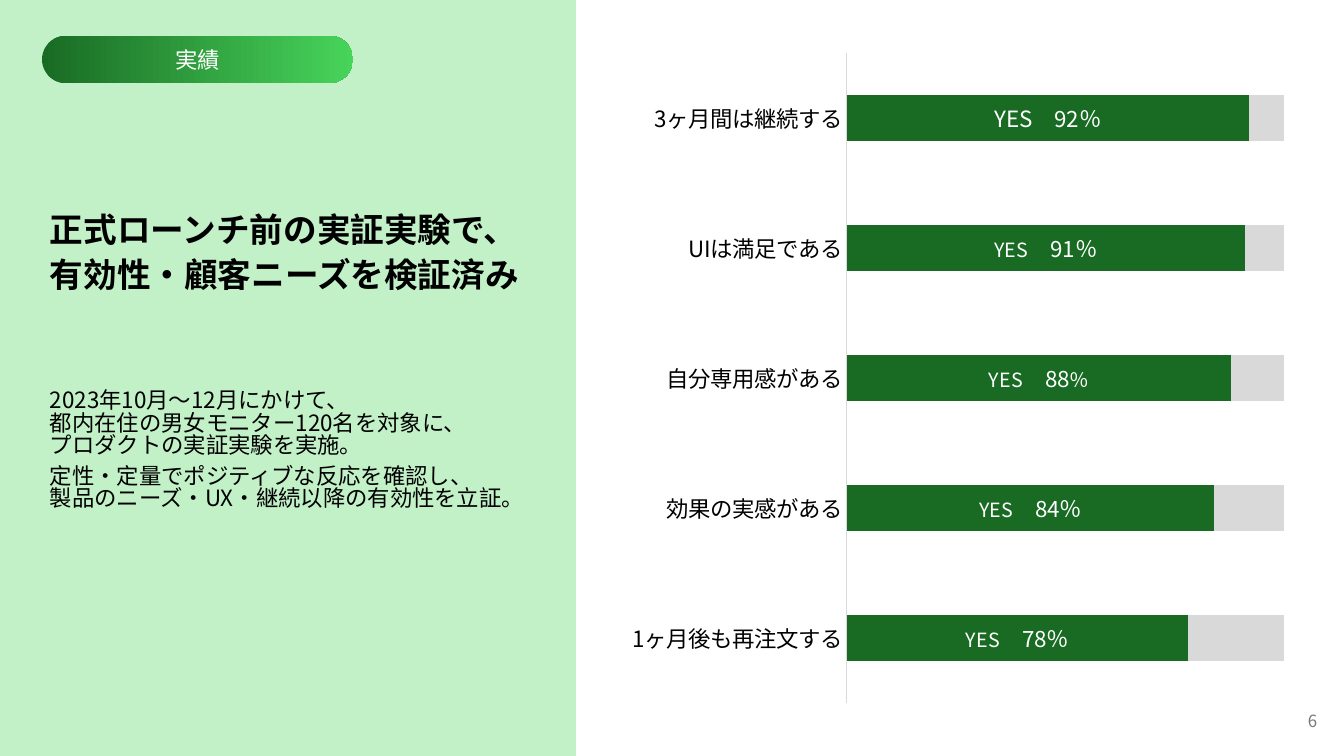
"""Build the trial results slide: message on the left, YES rates on the right."""
from lxml import etree
from pptx import Presentation, util as u
from pptx.chart.data import CategoryChartData
from pptx.dml.color import RGBColor
from pptx.enum import chart as ch, shapes, text
from pptx.oxml.ns import qn

FACE = "Noto Sans CJK JP"
BLACK = RGBColor(0, 0, 0)
WHITE = RGBColor(255, 255, 255)
GRAY = RGBColor(0x79, 0x79, 0x79)
PALE = RGBColor(0xD9, 0xD9, 0xD9)
MINT = RGBColor(0xC2, 0xF1, 0xC8)
GREEN = RGBColor(0x19, 0x6B, 0x24)
LIME = RGBColor(0x47, 0xD4, 0x5A)

TAG = ["実績"]
HEAD = ["正式ローンチ前の実証実験で、", "有効性・顧客ニーズを検証済み"]
BODY = [
    "2023年10月〜12月にかけて、\n都内在住の男女モニター120名を対象に、\nプロダクトの実証実験を実施。",
    "定性・定量でポジティブな反応を確認し、\n製品のニーズ・UX・継続以降の有効性を立証。",
]
PAGE = ["6"]
RATES = [
    ("1ヶ月後も再注文する", 78, (14, 16, 16)),
    ("効果の実感がある", 84, (14, 16, 16)),
    ("自分専用感がある", 88, (14, 16, 14)),
    ("UIは満足である", 91, (14, 16, 16)),
    ("3ヶ月間は継続する", 92, (16, 16, 16)),
]
WIDE, HIGH = 1344, 756
CHART = (612, 39, 685, 677)
PLOT = (847, 53, 437, 650)


def px(n):
    return u.Emu(round(n * 914400 / 100.8))


def style(font, size, color, bold=False):
    font.size, font.bold, font.name = u.Pt(size), bold, FACE
    font.color.rgb = color
    etree.SubElement(font._rPr, qn("a:ea")).set("typeface", FACE)


def write(frame, lines, size=16, color=BLACK, bold=False, align=text.PP_ALIGN.LEFT,
          anchor=text.MSO_ANCHOR.TOP, before=6, space=None):
    frame.word_wrap = True
    frame.vertical_anchor = anchor
    for i, line in enumerate(lines):
        para = frame.add_paragraph() if i else frame.paragraphs[0]
        para.text = line
        para.alignment, para.space_before = align, u.Pt(before)
        para.line_spacing = space
        for run in para.runs:
            style(run.font, size, color, bold)


def block(kind, *box):
    shape = slide.shapes.add_shape(kind, *map(px, box))
    shape.shadow.inherit = False
    shape.line.fill.background()
    return shape


def label(*box):
    return slide.shapes.add_textbox(*map(px, box)).text_frame


def place(plot):
    for old in plot.findall(qn("c:layout")):
        plot.remove(old)
    layout = etree.Element(qn("c:layout"))
    plot.insert(0, layout)
    manual = etree.SubElement(layout, qn("c:manualLayout"))
    x, y, w, h = PLOT
    left, top, width, height = CHART
    parts = {"layoutTarget": "inner", "xMode": "edge", "yMode": "edge",
             "x": (x - left) / width, "y": (y - top) / height,
             "w": w / width, "h": h / height}
    for key, val in parts.items():
        etree.SubElement(manual, qn("c:" + key)).set("val", str(val))


def draw():
    data = CategoryChartData()
    data.categories = [name for name, _, _ in RATES]
    data.add_series("YES", [rate for _, rate, _ in RATES])
    data.add_series("NO", [100 - rate for _, rate, _ in RATES])
    chart = slide.shapes.add_chart(
        ch.XL_CHART_TYPE.BAR_STACKED_100, *map(px, CHART), data).chart
    chart.has_legend = chart.has_title = False
    style(chart.font, 16, BLACK)
    place(chart._chartSpace.chart.plotArea)

    chart.value_axis.visible = False
    chart.value_axis.has_major_gridlines = False
    axis = chart.category_axis
    axis.major_tick_mark = axis.minor_tick_mark = ch.XL_TICK_MARK.NONE
    axis.format.line.color.rgb = PALE
    axis.format.line.width = u.Pt(0.75)
    style(axis.tick_labels.font, 16, BLACK)

    bars = chart.plots[0]
    bars.gap_width, bars.overlap, bars.vary_by_categories = 182, 100, False
    for series, color in zip(bars.series, (GREEN, PALE)):
        series.format.fill.solid()
        series.format.fill.fore_color.rgb = color
        series.invert_if_negative = False
    for i, (_, rate, sizes) in enumerate(RATES):
        note = bars.series[0].points[i].data_label
        para = note.text_frame.paragraphs[0]
        for part, size in zip(("YES", f"\u3000{rate}", "％"), sizes):
            run = para.add_run()
            run.text = part
            style(run.font, size, WHITE)
        note.position = ch.XL_LABEL_POSITION.CENTER


deck = Presentation()
deck.slide_width, deck.slide_height = px(WIDE), px(HIGH)
slide = deck.slides.add_slide(deck.slide_layouts[6])

panel = block(shapes.MSO_SHAPE.RECTANGLE, 0, 0, 576, HIGH)
panel.fill.solid()
panel.fill.fore_color.rgb = MINT

pill = block(shapes.MSO_SHAPE.ROUNDED_RECTANGLE, 42, 36, 311, 47)
pill.adjustments[0] = 0.5
pill.fill.gradient()
pill.fill.gradient_angle = 0
for stop, color in zip(pill.fill.gradient_stops, (GREEN, LIME)):
    stop.color.rgb = color
write(pill.text_frame, TAG, color=WHITE, align=text.PP_ALIGN.CENTER,
      anchor=text.MSO_ANCHOR.MIDDLE)

write(label(1278, 701, 49, 40), PAGE, size=12, color=GRAY, before=0,
      align=text.PP_ALIGN.RIGHT, anchor=text.MSO_ANCHOR.MIDDLE)
write(label(40, 386, 509, 161), BODY, space=0.83)
write(label(40, 209, 509, 162), HEAD, size=24, bold=True, space=0.9)
draw()
deck.save("out.pptx")
